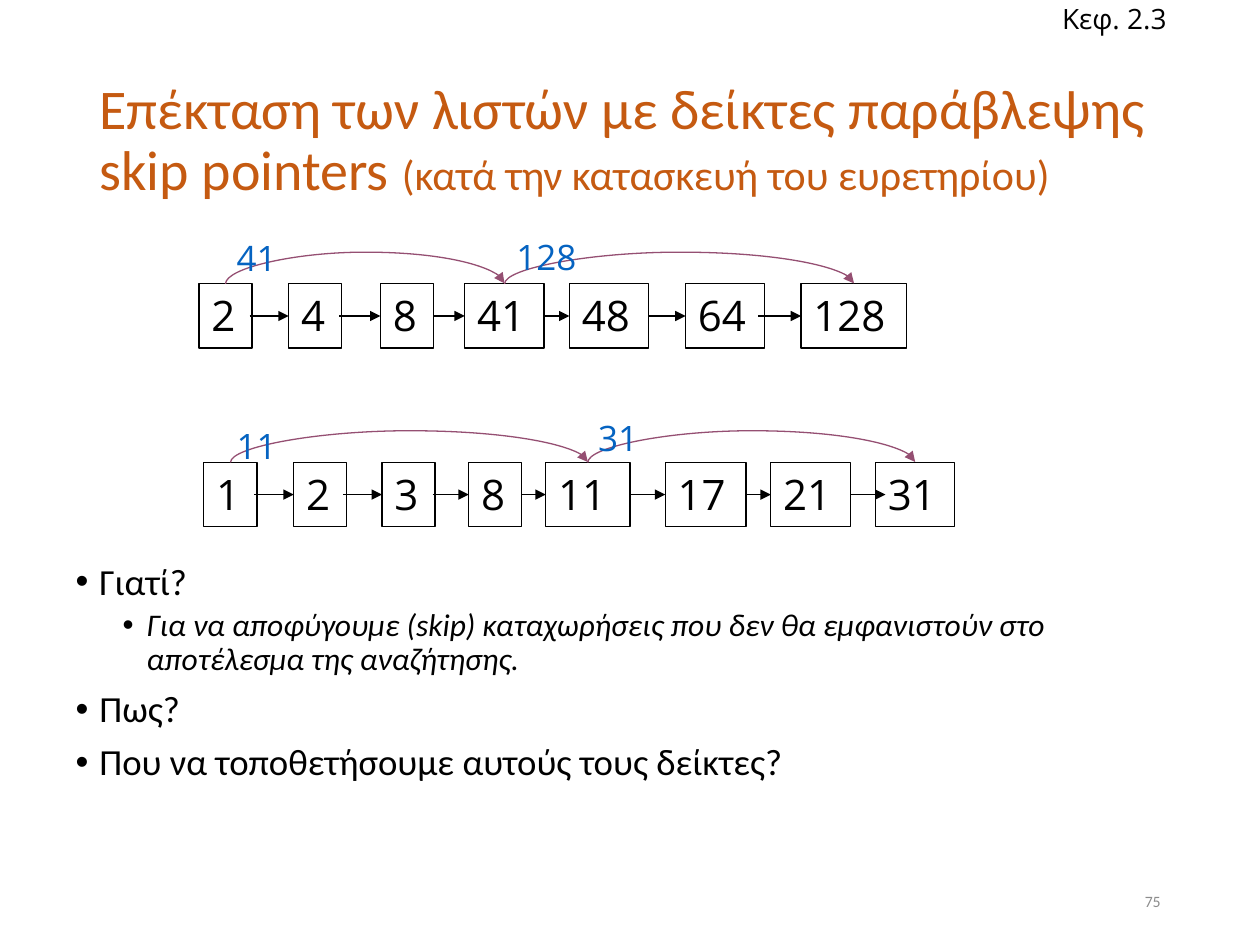
from lxml.etree import SubElement
from pptx import Presentation
from pptx.dml.color import RGBColor
from pptx.enum.shapes import MSO_CONNECTOR, MSO_SHAPE
from pptx.enum.text import MSO_ANCHOR, MSO_AUTO_SIZE, PP_ALIGN
from pptx.oxml.ns import qn
from pptx.util import Cm, Pt

COLORS = {
    "title": "C55A11",
    "ink": "000000",
    "page": "8C8C8C",
    "skip": "954F72",
    "target": "0563C1",
}
HEADING_FONT = "Calibri"
DIAGRAM_FONT = "Open Sans"
NODE_HEIGHT = 1.3
SKIP_RISE = 0.64
SKIP_DEPTH = 0.01

# Each node: docID, left, width, overlap of its outgoing arrow with the node
POSTINGS = [
    {
        "top": 5.72,
        "nodes": [
            ("2", 4.01, 1.07, 0.05), ("4", 5.82, 1.07, 0.05),
            ("8", 7.67, 1.07, 0), ("41", 9.37, 1.6, 0),
            ("48", 11.48, 1.6, 0), ("64", 13.82, 1.6, 0.13),
            ("128", 16.15, 2.13, 0),
        ],
        "skips": [(0, 3), (3, 6)],
        "last_reach": 0,
    },
    {
        "top": 9.32,
        "nodes": [
            ("1", 4.11, 1.07, 0.05), ("2", 5.92, 1.07, 0.07),
            ("3", 7.7, 1.07, 0.05), ("8", 9.45, 1.07, 0),
            ("11", 11, 1.7, 0), ("17", 13.41, 1.63, 0),
            ("21", 15.54, 1.6, 0), ("31", 17.65, 1.6, 0),
        ],
        "skips": [(0, 4), (4, 7)],
        "last_reach": 0.2,
    },
]
SKIP_LABELS = [
    ("31", 11.81, 8.28, 1.4, 1.09),
    ("11", 4.52, 8.43, 1.42, 1.12),
    ("41", 4.52, 4.65, 1.42, 1.12),
    ("128", 10.16, 4.62, 1.85, 1.09),
]
QUESTIONS = [
    ("Γιατί?", 0),
    ("Για να αποφύγουμε (skip) καταχωρήσεις που δεν θα εμφανιστούν στο "
     "αποτέλεσμα της αναζήτησης.", 1),
    ("Πως?", 0),
    ("Που να τοποθετήσουμε αυτούς τους δείκτες?", 0),
]


def rgb(name):
    return RGBColor.from_string(COLORS[name])


def add_text(paragraph, text, size, font=DIAGRAM_FONT, color="ink",
             italic=False, align=PP_ALIGN.LEFT):
    paragraph.alignment = align
    run = paragraph.add_run()
    run.text = text
    run.font.size = Pt(size)
    run.font.name = font
    run.font.italic = italic
    run.font.color.rgb = rgb(color)


def place(placeholder, left, top, width, height):
    placeholder.left, placeholder.top = Cm(left), Cm(top)
    placeholder.width, placeholder.height = Cm(width), Cm(height)
    placeholder.text_frame.auto_size = MSO_AUTO_SIZE.NONE


def fill_title(title):
    place(title, 1.75, 1.02, 21.89, 3.68)
    title.text_frame.vertical_anchor = MSO_ANCHOR.MIDDLE
    heading = title.text_frame.paragraphs[0]
    heading.line_spacing = 0.9
    add_text(heading, "Επέκταση των λιστών με δείκτες παράβλεψης skip pointers ",
             32, font=HEADING_FONT, color="title")
    add_text(heading, "(κατά την κατασκευή του ευρετηρίου)",
             24, font=HEADING_FONT, color="title")


def fill_questions(body):
    place(body, 1.27, 11.23, 22.86, 6.99)
    frame = body.text_frame
    for index, (text, level) in enumerate(QUESTIONS):
        item = frame.add_paragraph() if index else frame.paragraphs[0]
        item.level = level
        item.line_spacing = 0.9
        item.space_before = Pt(3.8 if level else 7.5)
        add_text(item, text, 18 if level else 21, font=HEADING_FONT,
                 italic=bool(level))
        properties = item._p.get_or_add_pPr()
        properties.set("marL", str(Cm(1.43 if level else 0.48)))
        properties.set("indent", str(Cm(-0.48)))
        SubElement(properties, qn("a:buFont"), typeface="Arial")
        SubElement(properties, qn("a:buChar"), char="•")


def add_label(slide, text, left, top, width, height, wrap=False,
              anchor=MSO_ANCHOR.TOP, **text_format):
    label = slide.shapes.add_textbox(Cm(left), Cm(top), Cm(width), Cm(height))
    frame = label.text_frame
    frame.word_wrap = wrap
    frame.auto_size = MSO_AUTO_SIZE.NONE if wrap else MSO_AUTO_SIZE.SHAPE_TO_FIT_TEXT
    frame.vertical_anchor = anchor
    add_text(frame.paragraphs[0], text, **text_format)


def add_node(slide, doc_id, left, top, width):
    node = slide.shapes.add_shape(MSO_SHAPE.RECTANGLE, Cm(left), Cm(top),
                                  Cm(width), Cm(NODE_HEIGHT))
    node.shadow.inherit = False
    node.fill.background()
    node.line.color.rgb = rgb("ink")
    node.line.width = Pt(0.75)
    frame = node.text_frame
    frame.word_wrap = False
    frame.auto_size = MSO_AUTO_SIZE.SHAPE_TO_FIT_TEXT
    frame.vertical_anchor = MSO_ANCHOR.TOP
    add_text(frame.paragraphs[0], doc_id, 24)
    return node


def style_arrow(arrow, color):
    arrow.line.color.rgb = rgb(color)
    arrow.line.width = Pt(0.75)
    SubElement(arrow.line._get_or_add_ln(), qn("a:tailEnd"), type="triangle")
    SubElement(arrow._element.spPr, qn("a:effectLst"))


def add_next_arrow(slide, source, target, overlap, reach):
    middle = source.top + source.height // 2
    arrow = slide.shapes.add_connector(
        MSO_CONNECTOR.STRAIGHT,
        source.left + source.width - Cm(overlap), middle,
        target.left + Cm(reach), middle)
    if not overlap:
        arrow.begin_connect(source, 3)
    if not reach:
        arrow.end_connect(target, 1)
    style_arrow(arrow, "ink")


def add_skip_arrow(slide, source, target):
    start = source.left + source.width // 2
    end = target.left + target.width // 2
    span, depth = end - start, Cm(SKIP_DEPTH)
    arrow = slide.shapes.add_connector(MSO_CONNECTOR.CURVE, 0, 0, depth, span)
    arrow.left = (start + end - depth) // 2
    arrow.top = source.top - span // 2
    properties = arrow._element.spPr
    frame = properties.find(qn("a:xfrm"))
    for key, value in (("rot", "5400000"), ("flipH", "1"), ("flipV", "1")):
        frame.set(key, value)
    adjustments = properties.find(qn("a:prstGeom")).find(qn("a:avLst"))
    bend = round(SKIP_RISE / SKIP_DEPTH * 100000)
    SubElement(adjustments, qn("a:gd"), name="adj1", fmla=f"val {bend}")
    style_arrow(arrow, "skip")


def add_postings(slide, postings):
    entries = postings["nodes"]
    nodes = [add_node(slide, doc_id, left, postings["top"], width)
             for doc_id, left, width, _ in entries]
    last = len(nodes) - 2
    for index, (source, target) in enumerate(zip(nodes, nodes[1:])):
        reach = postings["last_reach"] if index == last else 0
        add_next_arrow(slide, source, target, entries[index][3], reach)
    for source, target in postings["skips"]:
        add_skip_arrow(slide, nodes[source], nodes[target])


def main():
    deck = Presentation()
    deck.slide_width, deck.slide_height = Cm(25.4), Cm(19.05)
    slide = deck.slides.add_slide(deck.slide_layouts[1])
    fill_title(slide.shapes.title)
    fill_questions(slide.placeholders[1])
    add_label(slide, "75", 17.93, 17.65, 5.72, 1.02, wrap=True,
              anchor=MSO_ANCHOR.MIDDLE, size=9, font=HEADING_FONT,
              color="page", align=PP_ALIGN.RIGHT)
    for postings in POSTINGS:
        add_postings(slide, postings)
    for label in SKIP_LABELS:
        add_label(slide, *label, size=20, color="target")
    add_label(slide, "Κεφ. 2.3", 21.16, -0.1, 2.79, 0.94,
              anchor=MSO_ANCHOR.MIDDLE, size=16)
    deck.save("out.pptx")


if __name__ == "__main__":
    main()
